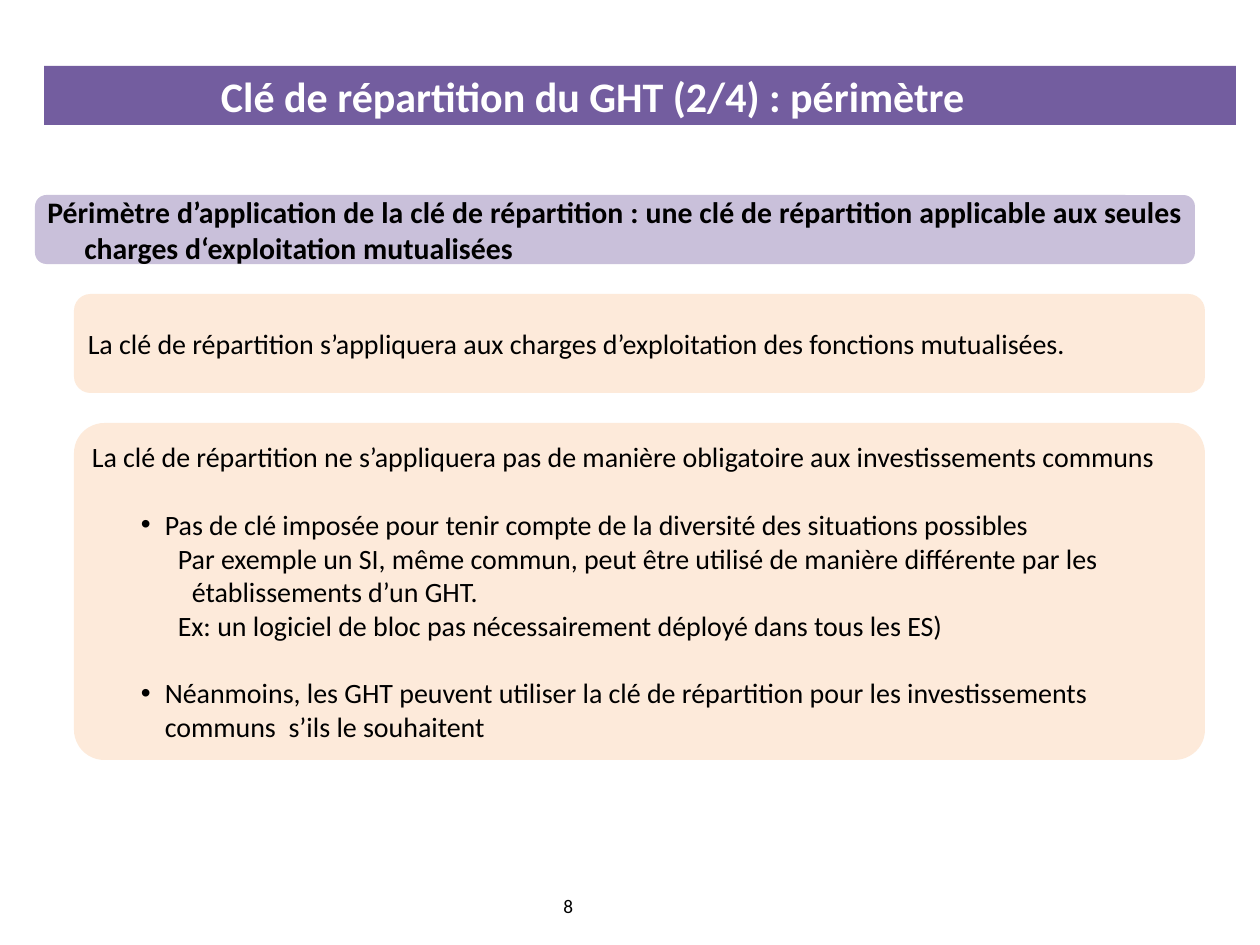
from dataclasses import dataclass

import pptx
import pptx.dml.color
import pptx.enum.shapes
import pptx.enum.text
import pptx.oxml
import pptx.oxml.ns
import pptx.util

SHAPES = pptx.enum.shapes.MSO_SHAPE
ALIGN = pptx.enum.text.PP_ALIGN
PX_PER_INCH = 126


@dataclass(frozen=True)
class Theme:
    font: str = "Calibri"
    banner: str = "735D9F"
    heading: str = "C9C0DA"
    panel: str = "FDEADA"
    light: str = "FFFFFF"
    dark: str = "000000"
    title_size: int = 24
    heading_size: int = 17
    body_size: int = 16
    number_size: int = 11
    blank_line: float = 19.5


THEME = Theme()


@dataclass(frozen=True)
class Style:
    """Paragraph look: left margin and first-line indent in px."""
    margin: int = 0
    indent: int = 0
    align: ALIGN = ALIGN.LEFT
    bullet: bool = False


TITLE = Style(168)
HEADING = Style(37, -37, ALIGN.JUSTIFY)
LEAD = Style(39, -39, ALIGN.JUSTIFY)
BULLET = Style(73, -24, bullet=True)
DETAIL = Style(100, -14)


def px(length):
    return pptx.util.Emu(round(length * 914400 / PX_PER_INCH))


def rgb(colour):
    return pptx.dml.color.RGBColor.from_string(colour)


def write_paragraph(paragraph, text, style, size, colour=THEME.dark, bold=False):
    paragraph.text = text
    paragraph.alignment = style.align
    properties = paragraph._p.get_or_add_pPr()
    properties.set("marL", str(px(style.margin)))
    properties.set("indent", str(px(style.indent)))
    if style.bullet:
        for tag, name, value in (("a:buFont", "typeface", "Arial"),
                                 ("a:buChar", "char", "•")):
            element = pptx.oxml.parse_xml(
                f'<{tag} {pptx.oxml.ns.nsdecls("a")} {name}="{value}"/>')
            properties.append(element)
    for run in paragraph.runs:
        run.font.name = THEME.font
        run.font.size = pptx.util.Pt(size)
        run.font.bold = bold
        run.font.color.rgb = rgb(colour)


def add_panel(slide, box, kind, fill):
    """Add a borderless filled shape and return it."""
    shape = slide.shapes.add_shape(kind, *map(px, box))
    shape.shadow.inherit = False
    shape.fill.solid()
    shape.fill.fore_color.rgb = rgb(fill)
    shape.line.fill.background()
    frame = shape.text_frame
    frame.word_wrap = True
    frame.vertical_anchor = pptx.enum.text.MSO_ANCHOR.MIDDLE
    frame.margin_left = frame.margin_right = px(9)
    frame.margin_top = frame.margin_bottom = px(5)
    return shape


def add_title(slide, box, text):
    shape = add_panel(slide, box, SHAPES.RECTANGLE, THEME.banner)
    write_paragraph(shape.text_frame.paragraphs[0], text, TITLE,
                    THEME.title_size, THEME.light, bold=True)


def add_heading(slide, box, text):
    shape = add_panel(slide, box, SHAPES.ROUNDED_RECTANGLE, THEME.heading)
    write_paragraph(shape.text_frame.paragraphs[0], text, HEADING,
                    THEME.heading_size, bold=True)


def add_body(slide, box, lines, corner=0.167):
    """Add a body panel; each bullet opens a group set off by one line."""
    shape = add_panel(slide, box, SHAPES.ROUNDED_RECTANGLE, THEME.panel)
    shape.adjustments[0] = corner
    frame = shape.text_frame
    for index, (style, text) in enumerate(lines):
        paragraph = frame.add_paragraph() if index else frame.paragraphs[0]
        write_paragraph(paragraph, text, style, THEME.body_size)
        if style.bullet:
            paragraph.space_before = pptx.util.Pt(THEME.blank_line)


def add_page_number(slide, box, number):
    frame = slide.shapes.add_textbox(*map(px, box)).text_frame
    frame.word_wrap = True
    write_paragraph(frame.paragraphs[0], str(number), Style(), THEME.number_size)


def main():
    presentation = pptx.Presentation()
    presentation.slide_width, presentation.slide_height = px(1260), px(945)
    slide = presentation.slides.add_slide(presentation.slide_layouts[6])

    add_title(slide, (44, 66, 1192, 59),
              "Clé de répartition du GHT (2/4) : périmètre")
    add_heading(slide, (35, 195, 1160, 69),
                "Périmètre d’application de la clé de répartition : une clé de "
                "répartition applicable aux seules charges d‘exploitation mutualisées")
    add_body(slide, (74, 294, 1131, 99), [
        (LEAD, "La clé de répartition s’appliquera aux charges d’exploitation "
               "des fonctions mutualisées."),
    ])
    add_body(slide, (74, 423, 1131, 337), [
        (LEAD, "La clé de répartition ne s’appliquera pas de manière obligatoire "
               "aux investissements communs"),
        (BULLET, "Pas de clé imposée pour tenir compte de la diversité des "
                 "situations possibles"),
        (DETAIL, "Par exemple un SI, même commun, peut être utilisé de manière "
                 "différente par les établissements d’un GHT."),
        (DETAIL, "Ex: un logiciel de bloc pas nécessairement déployé dans tous "
                 "les ES)"),
        (BULLET, "Néanmoins, les GHT peuvent utiliser la clé de répartition pour "
                 "les investissements communs  s’ils le souhaitent"),
    ], corner=0.09)
    add_page_number(slide, (551, 888, 294, 50), 8)

    presentation.save("out.pptx")


if __name__ == "__main__":
    main()
